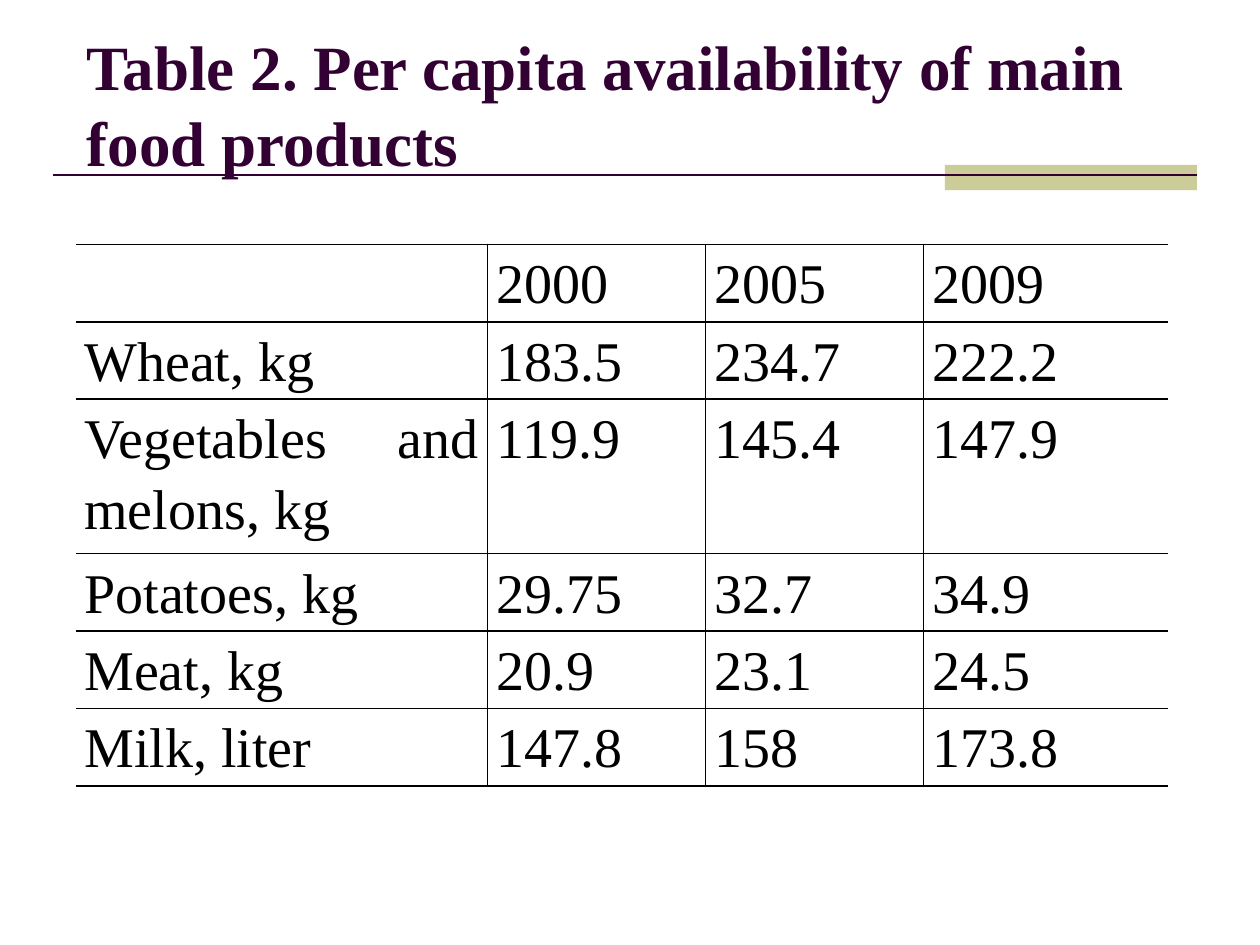
from lxml.etree import SubElement
from pptx import Presentation
from pptx.dml.color import RGBColor
from pptx.enum.shapes import MSO_CONNECTOR, MSO_SHAPE
from pptx.enum.text import MSO_ANCHOR, PP_ALIGN
from pptx.oxml.ns import qn
from pptx.util import Inches, Pt

TITLE = "Table 2. Per capita availability of main food products"
ROWS = [
    ("", "2000", "2005", "2009"),
    ("Wheat, kg", "183.5", "234.7", "222.2"),
    ("Vegetables and melons, kg", "119.9", "145.4", "147.9"),
    ("Potatoes, kg", "29.75", "32.7", "34.9"),
    ("Meat, kg", "20.9", "23.1", "24.5"),
    ("Milk, liter", "147.8", "158", "173.8"),
]
WIDTHS = [3.27, 1.73, 1.73, 1.94]
HEIGHTS = [0.61] + [0.51] * (len(ROWS) - 1)
COLORS = {"plum": "330033", "sand": "CCCC99", "ink": "000000"}
FONT = "Times New Roman"


def color(name):
    return RGBColor.from_string(COLORS[name])


def write(frame, text, size=32, tint="ink", bold=False,
          align=PP_ALIGN.LEFT, lines=None, gap=0):
    para = frame.paragraphs[0]
    para.alignment = align
    para.line_spacing = lines
    para.space_before = para.space_after = Pt(gap)
    run = para.add_run()
    run.text = text
    font = run.font
    font.name, font.size, font.bold = FONT, Pt(size), bold
    font.color.rgb = color(tint)


def border(cell, sides):
    props = cell._tc.get_or_add_tcPr()
    for pos, side in enumerate("LRTB"):
        line = props.makeelement(qn(f"a:ln{side}"), {"w": str(Pt(1))})
        if side in sides:
            fill = SubElement(line, qn("a:solidFill"))
            SubElement(fill, qn("a:srgbClr"), val=COLORS["ink"])
        else:
            SubElement(line, qn("a:noFill"))
        props.insert(pos, line)


deck = Presentation()
deck.slide_width, deck.slide_height = Inches(10), Inches(7.5)
slide = deck.slides.add_slide(deck.slide_layouts[6])
shapes = slide.shapes

# Accent bar and rule
bar = shapes.add_shape(MSO_SHAPE.RECTANGLE, Inches(7.5), Inches(1.31),
                       Inches(2), Inches(0.2))
bar.shadow.inherit = False
bar.fill.solid()
bar.fill.fore_color.rgb = color("sand")
bar.line.fill.background()

rule = shapes.add_connector(MSO_CONNECTOR.STRAIGHT, Inches(0.42), Inches(1.39),
                            Inches(9.5), Inches(1.39))
rule.line.color.rgb = color("plum")
rule.line.width = Pt(1.5)
SubElement(rule._element.spPr, qn("a:effectLst"))

# Title
title = shapes.add_textbox(Inches(0.59), Inches(0.13), Inches(8.91), Inches(1.34))
title.text_frame.word_wrap = True
title.text_frame.vertical_anchor = MSO_ANCHOR.BOTTOM
write(title.text_frame, TITLE, size=36, tint="plum", bold=True)

# Food table, open at its left and right edges
table = shapes.add_table(len(ROWS), len(WIDTHS), Inches(0.6), Inches(1.94),
                         Inches(sum(WIDTHS)), Inches(sum(HEIGHTS))).table
table.first_row = table.horz_banding = False
for col, width in zip(table.columns, WIDTHS):
    col.width = Inches(width)
for row, height, texts in zip(table.rows, HEIGHTS, ROWS):
    row.height = Inches(height)
    for c, (cell, text) in enumerate(zip(row.cells, texts)):
        cell.fill.background()
        cell.margin_left = cell.margin_right = Inches(0.07)
        cell.margin_top = cell.margin_bottom = 0
        if text:
            write(cell.text_frame, text, align=PP_ALIGN.JUSTIFY, lines=1.15, gap=6)
        left = "L" if c > 0 else ""
        right = "R" if c < len(WIDTHS) - 1 else ""
        border(cell, "TB" + left + right)

deck.save("out.pptx")
